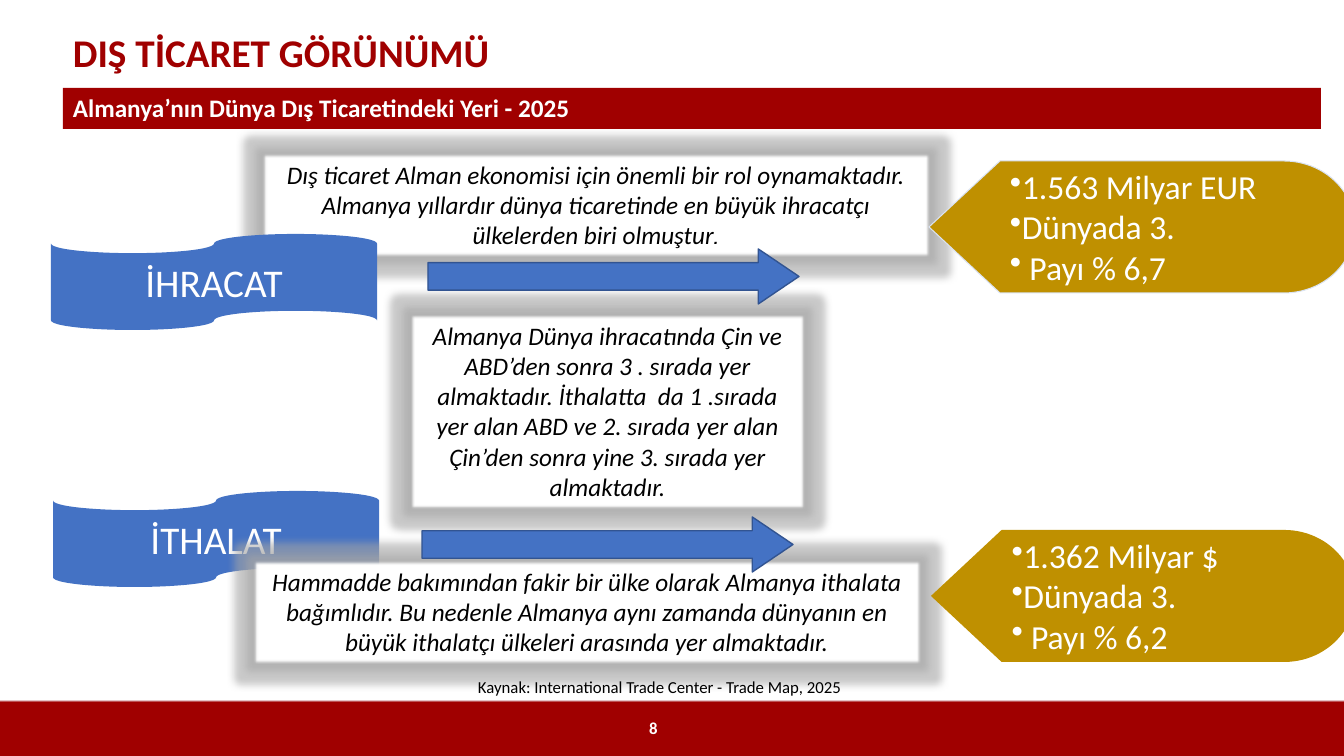
from lxml import etree
from pptx import Presentation
from pptx.dml.color import RGBColor
from pptx.enum import shapes, text
from pptx.oxml import parse_xml
from pptx.oxml.ns import nsdecls, qn

PX = 914400 / 100.8
PT = 12700
COLORS = {"red": "A00000", "pale": "F6F8FC", "gold": "BF9000", "blue": "4472C4",
          "navy": "325491", "ice": "DAE3F3", "white": "FFFFFF", "black": "000000"}
KIND = shapes.MSO_SHAPE
CENTER = text.PP_ALIGN.CENTER
HALO = (f'<a:effectLst {nsdecls("a")}><a:glow rad="139700"><a:srgbClr val="A5A5A5">'
        '<a:alpha val="60000"/></a:srgbClr></a:glow><a:softEdge rad="12700"/></a:effectLst>')


def rgb(name):
    return RGBColor.from_string(COLORS[name])


def add_shape(kind, box, fill, line=None, width=1):
    sp = slide.shapes.add_shape(kind, *(round(v * PX) for v in box))
    sp.shadow.inherit = False
    sp.fill.solid()
    sp.fill.fore_color.rgb = rgb(fill)
    if line:
        sp.line.color.rgb = rgb(line)
        sp.line.width = round(width * PT)
    else:
        sp.line.fill.background()
    return sp


def write(target, lines, size, color="white", bold=False, italic=False, align=None,
          anchor=text.MSO_ANCHOR.TOP, bullet=False):
    """Write lines into a shape, or into a new text box when target is a box of px."""
    if isinstance(target, tuple):
        target = slide.shapes.add_textbox(*(round(v * PX) for v in target))
    tf = target.text_frame
    tf.word_wrap = True
    tf.vertical_anchor = anchor
    for i, line in enumerate(lines):
        p = tf.add_paragraph() if i else tf.paragraphs[0]
        p.alignment = align or text.PP_ALIGN.LEFT
        if bullet:
            etree.SubElement(p._p.get_or_add_pPr(), qn("a:buChar")).set("char", "•")
        r = p.add_run()
        r.text = line
        r.font.name = "Calibri"
        r.font.size = size * PT
        r.font.bold = bold
        r.font.italic = italic
        r.font.color.rgb = rgb(color)
    return tf


prs = Presentation()
prs.slide_width, prs.slide_height = round(1344 * PX), round(756 * PX)
slide = prs.slides.add_slide(prs.slide_layouts[6])
MIDDLE = text.MSO_ANCHOR.MIDDLE

# Footer and headings
footer = add_shape(KIND.RECTANGLE, (0, 700, 1344, 56), "red")
footer.fill.gradient()
footer.fill.gradient_angle = 270
for stop, name, position in zip(footer.fill.gradient_stops, ("pale", "red"), (0, 0.04)):
    stop.color.rgb = rgb(name)
    stop.position = position
write((601, 700, 105, 56), ["8"], 12, bold=True, align=CENTER, anchor=MIDDLE)
add_shape(KIND.RECTANGLE, (63, 88, 1258, 41), "red")
write((63, 28, 1258, 48), ["DIŞ TİCARET GÖRÜNÜMÜ"], 28, "red", bold=True, anchor=MIDDLE)
write((63, 87, 1258, 41), ["Almanya’nın Dünya Dış Ticaretindeki Yeri - 2025"], 18,
      bold=True, anchor=MIDDLE)

# Import banner lies under the notes, export banner over them
TAPE = KIND.FLOWCHART_PUNCHED_TAPE
import_tape = add_shape(TAPE, (53, 491, 326, 96), "blue")
write(import_tape, ["İTHALAT"], 28, align=CENTER)

notes = [
    ((411, 315, 393, 193),
     "Almanya Dünya ihracatında Çin ve ABD’den sonra 3 . sırada yer almaktadır. "
     "İthalatta  da 1 .sırada yer alan ABD ve 2. sırada yer alan Çin’den sonra "
     "yine 3. sırada yer almaktadır."),
    ((263, 154, 666, 102),
     "Dış ticaret Alman ekonomisi için önemli bir rol oynamaktadır. Almanya yıllardır "
     "dünya ticaretinde en büyük ihracatçı ülkelerden biri olmuştur"),
    ((254, 561, 666, 102),
     "Hammadde bakımından fakir bir ülke olarak Almanya ithalata bağımlıdır. Bu nedenle "
     "Almanya aynı zamanda dünyanın en büyük ithalatçı ülkeleri arasında yer almaktadır."),
]
for box, note in notes:
    sp = add_shape(KIND.RECTANGLE, box, "white")
    props = sp._element.spPr
    props.replace(props.find(qn("a:effectLst")), parse_xml(HALO))
    tf = write(sp, [note], 18, "black", italic=True, align=CENTER)
    if not note.endswith("."):
        r = tf.paragraphs[0].add_run()
        r.text = "."
        r.font.name = "Cabin"
        r.font.size = 18 * PT
        r.font.italic = True
        r.font.color.rgb = rgb("black")

export_tape = add_shape(TAPE, (51, 234, 326, 96), "blue")
write(export_tape, ["İHRACAT"], 28, align=CENTER)

# Figures and the arrows that lead to them
figures = [
    ((929, 161, 426, 132), "ice", ["1.563 Milyar EUR", "Dünyada 3.", " Payı % 6,7"]),
    ((931, 530, 424, 132), None, ["1.362 Milyar $", "Dünyada 3.", " Payı % 6,2"]),
]
for box, line, facts in figures:
    sp = add_shape(KIND.FLOWCHART_DISPLAY, box, "gold", line, 0.75)
    write(sp, facts, 24, bullet=True)
for left, top in ((428, 249), (422, 517)):
    arrow = add_shape(KIND.RIGHT_ARROW, (left, top, 371, 55), "blue", "navy")
    arrow.adjustments[1] = 0.74

write((468, 672, 573, 30), ["Kaynak: International Trade Center - Trade Map, 2025"], 12, "black")

prs.save("out.pptx")
